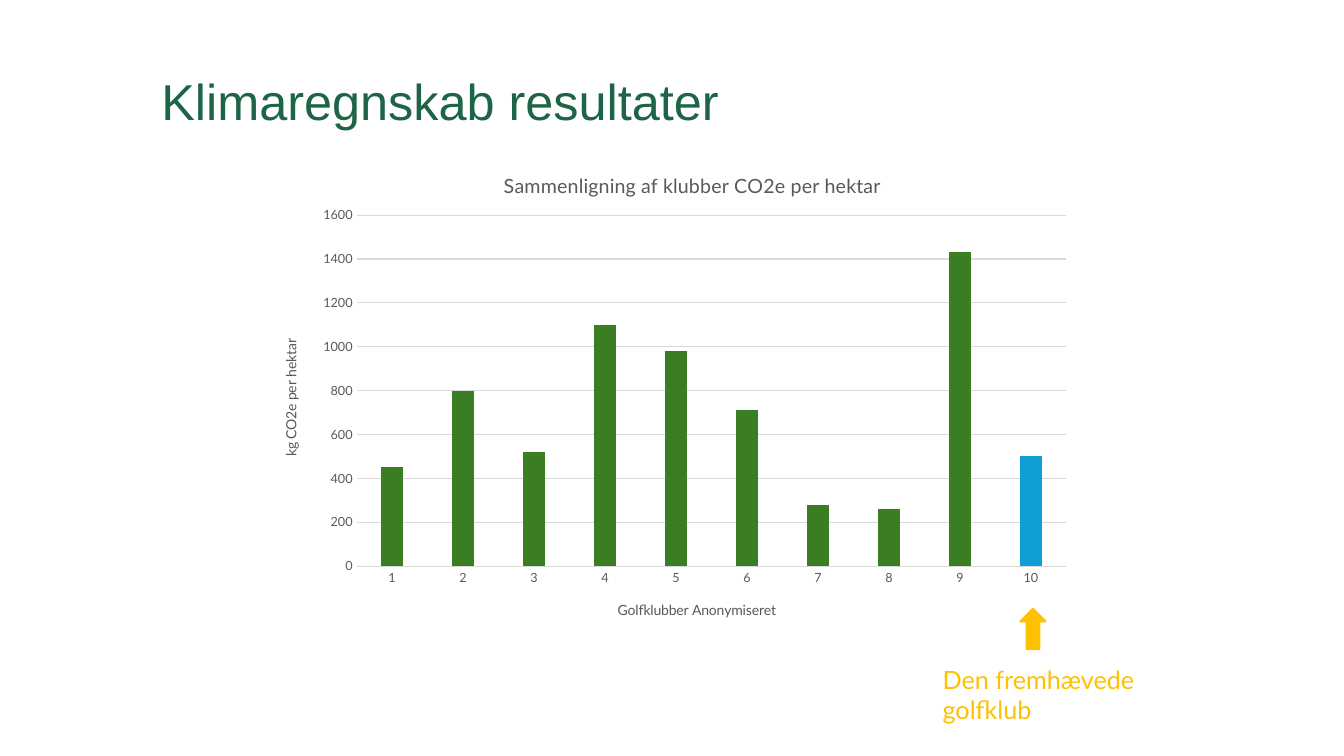
import pptx
import pptx.chart.data
import pptx.dml.color
import pptx.enum.chart
import pptx.enum.shapes
import pptx.enum.text
import pptx.oxml
import pptx.oxml.ns
import pptx.util

Inches = pptx.util.Inches
Pt = pptx.util.Pt
RGBColor = pptx.dml.color.RGBColor

DARK_GREEN = RGBColor(0x1E, 0x64, 0x46)
BAR_GREEN = RGBColor(0x3B, 0x7D, 0x23)
BAR_BLUE = RGBColor(0x0F, 0x9E, 0xD5)
AMBER = RGBColor(0xFF, 0xC0, 0x00)
GREY = RGBColor(0x59, 0x59, 0x59)
GRID_GREY = RGBColor(0xD9, 0xD9, 0xD9)

CO2E_PER_HECTARE = (450, 800, 520, 1100, 980, 710, 280, 260, 1430, 500)
HIGHLIGHTED_CLUB = 10


def write_text(tf, text, size, color, font="Lato", bold=False, spacing=None):
    p = tf.paragraphs[0]
    p.alignment = pptx.enum.text.PP_ALIGN.LEFT
    if spacing:
        p.line_spacing = spacing
    r = p.add_run()
    r.text = text
    r.font.size = Pt(size)
    r.font.name = font
    r.font.bold = bold
    r.font.color.rgb = color


def set_layout(parent, index, x, y, w=None, h=None):
    qn = pptx.oxml.ns.qn
    for old in parent.findall(qn("c:layout")):
        parent.remove(old)
    values = [("xMode", "edge"), ("yMode", "edge"), ("x", x), ("y", y)]
    if w:
        values = [("layoutTarget", "inner")] + values + [("w", w), ("h", h)]
    body = "".join(f'<c:{name} val="{value}"/>' for name, value in values)
    parent.insert(index, pptx.oxml.parse_xml(
        f'<c:layout {pptx.oxml.ns.nsdecls("c")}>'
        f'<c:manualLayout>{body}</c:manualLayout></c:layout>'))


def add_title(slide, text):
    sp = slide.shapes.title
    sp.left, sp.top = Inches(1.5), Inches(0.66)
    sp.width, sp.height = Inches(9), Inches(0.6)
    tf = sp.text_frame
    tf.margin_left = tf.margin_right = Inches(0.1)
    tf.margin_top = tf.margin_bottom = Inches(0.1)
    tf.vertical_anchor = pptx.enum.text.MSO_ANCHOR.TOP
    tf.auto_size = pptx.enum.text.MSO_AUTO_SIZE.NONE
    write_text(tf, text, 36, DARK_GREEN, font="Arial", spacing=0.9)


def format_axis(axis, title, x, y):
    axis.major_tick_mark = pptx.enum.chart.XL_TICK_MARK.NONE
    axis.minor_tick_mark = pptx.enum.chart.XL_TICK_MARK.NONE
    font = axis.tick_labels.font
    font.size = Pt(9)
    font.name = "Lato"
    font.color.rgb = GREY
    write_text(axis.axis_title.text_frame, title, 10, GREY)
    set_layout(axis.axis_title._element, 1, x, y)


def format_line(line):
    line.color.rgb = GRID_GREY
    line.width = Pt(0.75)


def fill_solid(fill, color):
    fill.solid()
    fill.fore_color.rgb = color


def add_club_chart(slide):
    data = pptx.chart.data.CategoryChartData()
    data.categories = [str(i + 1) for i in range(len(CO2E_PER_HECTARE))]
    data.add_series("Series 1", CO2E_PER_HECTARE)
    chart = slide.shapes.add_chart(
        pptx.enum.chart.XL_CHART_TYPE.COLUMN_CLUSTERED,
        Inches(2.6), Inches(1.47), Inches(8.14), Inches(4.85), data).chart
    chart.has_legend = False
    chart.font.size = Pt(10)
    chart.font.name = "Lato"
    write_text(chart.chart_title.text_frame,
               "Sammenligning af klubber CO2e per hektar", 14, GREY)
    set_layout(chart.chart_title._element, 1, 0.29, 0.04)

    plot = chart.plots[0]
    plot.vary_by_categories = False
    plot.gap_width = 219
    plot.overlap = -27
    set_layout(plot._element.getparent(), 0, 0.115, 0.137, 0.865, 0.718)
    series = plot.series[0]
    fill_solid(series.format.fill, BAR_GREEN)
    fill_solid(series.points[HIGHLIGHTED_CLUB - 1].format.fill, BAR_BLUE)

    format_axis(chart.category_axis, "Golfklubber Anonymiseret", 0.43, 0.92)
    format_line(chart.category_axis.format.line)
    axis = chart.value_axis
    format_axis(axis, "kg CO2e per hektar", 0.02, 0.385)
    axis.minimum_scale, axis.maximum_scale, axis.major_unit = 0, 1600, 200
    axis.format.line.fill.background()
    format_line(axis.major_gridlines.format.line)


def add_up_arrow(slide, left, top, width, height):
    sp = slide.shapes.add_shape(
        pptx.enum.shapes.MSO_SHAPE.UP_ARROW,
        Inches(left), Inches(top), Inches(width), Inches(height))
    sp.shadow.inherit = False
    fill_solid(sp.fill, AMBER)
    sp.line.color.rgb = AMBER
    sp.line.width = Pt(1.5)


def add_label(slide, text, left, top, width, height):
    tf = slide.shapes.add_textbox(
        Inches(left), Inches(top), Inches(width), Inches(height)).text_frame
    tf.word_wrap = False
    tf.auto_size = pptx.enum.text.MSO_AUTO_SIZE.SHAPE_TO_FIT_TEXT
    write_text(tf, text, 18, AMBER)


def main():
    prs = pptx.Presentation()
    prs.slide_width, prs.slide_height = Inches(13.33), Inches(7.5)
    slide = prs.slides.add_slide(prs.slide_layouts.get_by_name("Title Only"))
    add_title(slide, "Klimaregnskab resultater")
    add_label(slide, "Den fremhævede golfklub", 9.25, 6.54, 2.89, 0.4)
    add_up_arrow(slide, 10.12, 6.04, 0.25, 0.4)
    add_club_chart(slide)
    prs.save("out.pptx")


if __name__ == "__main__":
    main()
